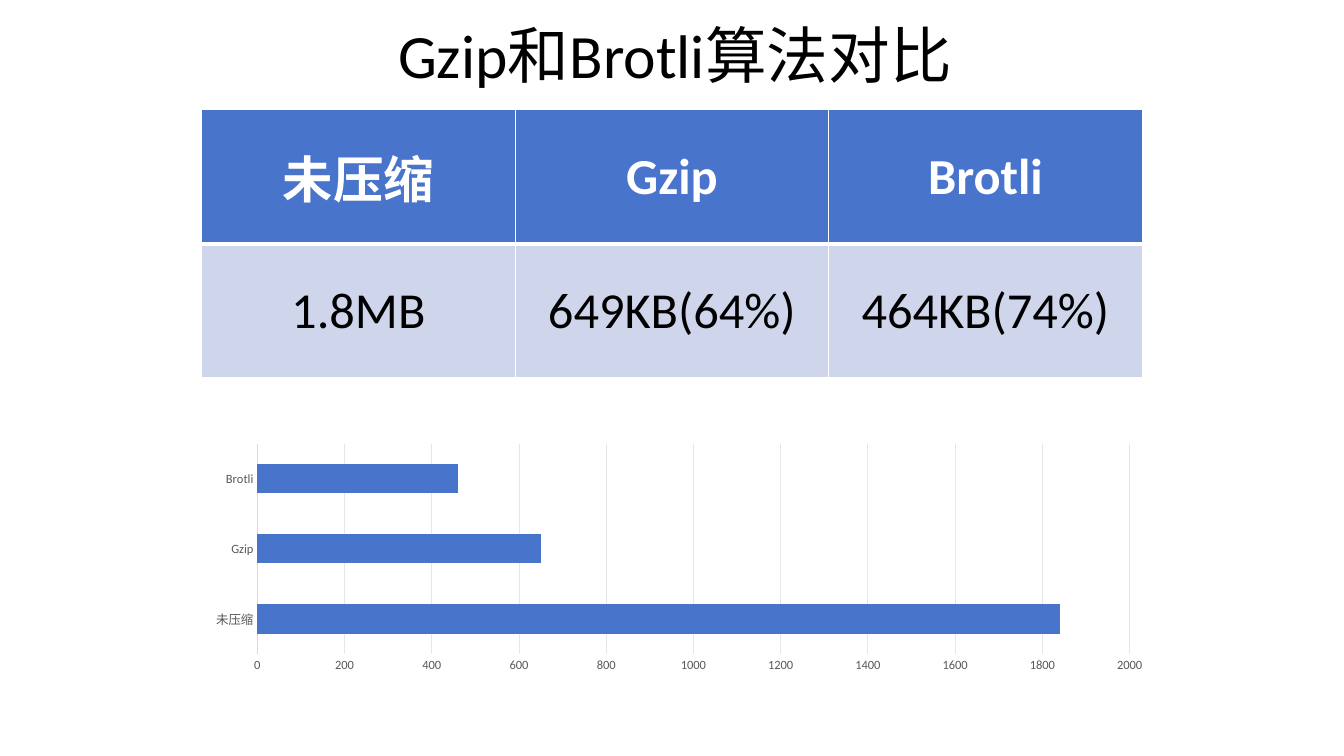
from lxml.etree import SubElement
from pptx import Presentation
from pptx.chart.data import CategoryChartData
from pptx.dml.color import RGBColor
from pptx.enum.chart import XL_CHART_TYPE as ChartType, XL_TICK_MARK as Tick
from pptx.enum.text import MSO_ANCHOR as Anchor, MSO_AUTO_SIZE as AutoSize, PP_ALIGN as Align
from pptx.oxml.ns import qn
from pptx.util import Pt

PX = 9144  # 100 px to the inch


def color(code):
    return RGBColor.from_string(code)


def emu(*lengths):
    return [length * PX for length in lengths]


class SlideBuilder:
    FONT = "Calibri"
    BLUE, PALE, WHITE, BLACK = "4874CB", "CFD6EC", "FFFFFF", "000000"
    LABEL, AXIS, GRID = "595959", "D9D9D9", "E6E6E6"

    def __init__(self, deck):
        self.page = deck.slides.add_slide(deck.slide_layouts[5])

    def style(self, font, size, code, bold=False):
        font.name, font.size, font.bold = self.FONT, Pt(size), bold
        font.color.rgb = color(code)

    def add_text(self, frame, text, size, code, bold=False):
        para = frame.paragraphs[0]
        para.alignment = Align.CENTER
        span = para.add_run()
        span.text = text
        self.style(span.font, size, code, bold)

    def title(self, text, *place):
        box = self.page.shapes.title
        box.left, box.top, box.width, box.height = emu(*place)
        frame = box.text_frame
        frame.word_wrap = True
        frame.vertical_anchor = Anchor.MIDDLE
        frame.auto_size = AutoSize.SHAPE_TO_FIT_TEXT
        self.add_text(frame, text, 44, self.BLACK)

    def borders(self, cell, widths):
        props = cell._tc.get_or_add_tcPr()
        for index, (side, width) in enumerate(widths.items()):
            line = props.makeelement(qn(f"a:ln{side}"), w=str(Pt(width)))
            fill = SubElement(line, qn("a:solidFill"))
            SubElement(fill, qn("a:srgbClr"), val=self.WHITE)
            props.insert(index, line)

    def table(self, rows, *place):
        frame = self.page.shapes.add_table(len(rows), len(rows[0]), *emu(*place))
        for r, texts in enumerate(rows):
            header = r == 0
            for c, text in enumerate(texts):
                cell = frame.table.cell(r, c)
                cell.vertical_anchor = Anchor.MIDDLE
                cell.fill.solid()
                cell.fill.fore_color.rgb = color(self.BLUE if header else self.PALE)
                self.add_text(cell.text_frame, text, 36,
                              self.WHITE if header else self.BLACK, header)
                # The rule between header and body is thicker
                self.borders(cell, {"L": 1, "R": 1, "T": 1 if header else 3,
                                    "B": 3 if header else 1})

    def axis(self, axis):
        axis.major_tick_mark = axis.minor_tick_mark = Tick.NONE
        self.style(axis.tick_labels.font, 9, self.LABEL)

    def line(self, line, code):
        line.color.rgb = color(code)
        line.width = Pt(0.75)

    def bar_chart(self, sizes, layout, *place):
        data = CategoryChartData()
        data.categories = list(sizes)
        data.add_series("Series 1", list(sizes.values()))
        chart = self.page.shapes.add_chart(
            ChartType.BAR_CLUSTERED, *emu(*place), data).chart
        chart.has_legend = chart.has_title = False
        self.style(chart.font, 10, self.BLACK)

        # Bars
        plot = chart.plots[0]
        plot.gap_width, plot.overlap, plot.vary_by_categories = 140, -40, False
        fill = plot.series[0].format.fill
        fill.solid()
        fill.fore_color.rgb = color(self.BLUE)

        # Axes
        self.axis(chart.category_axis)
        self.line(chart.category_axis.format.line, self.AXIS)
        values = chart.value_axis
        self.axis(values)
        values.format.line.fill.background()
        values.minimum_scale, values.maximum_scale, values.major_unit = 0, 2000, 200
        values.has_major_gridlines = True
        self.line(values.major_gridlines.format.line, self.GRID)

        # Inner plot area, as fractions of the chart
        area = chart._chartSpace.chart.plotArea
        for old in area.findall(qn("c:layout")):
            area.remove(old)
        holder = area.makeelement(qn("c:layout"))
        area.insert(0, holder)
        manual = SubElement(holder, qn("c:manualLayout"))
        settings = {"layoutTarget": "inner", "xMode": "edge", "yMode": "edge",
                    **dict(zip("xywh", layout))}
        for name, value in settings.items():
            SubElement(manual, qn(f"c:{name}"), val=str(value))


def main():
    deck = Presentation()
    deck.slide_width, deck.slide_height = emu(1333, 750)
    slide = SlideBuilder(deck)

    # Title
    slide.title("Gzip和Brotli算法对比", 206, 11, 927, 84)

    # Size table
    names = ["未压缩", "Gzip", "Brotli"]
    slide.table([names, ["1.8MB", "649KB(64%)", "464KB(74%)"]], 200, 109, 933, 266)

    # Size chart in KB
    slide.bar_chart(dict(zip(names, [1840, 650, 460])),
                    (0.06, 0.15, 0.94, 0.61), 200, 389, 933, 342)

    deck.save("out.pptx")


if __name__ == "__main__":
    main()
